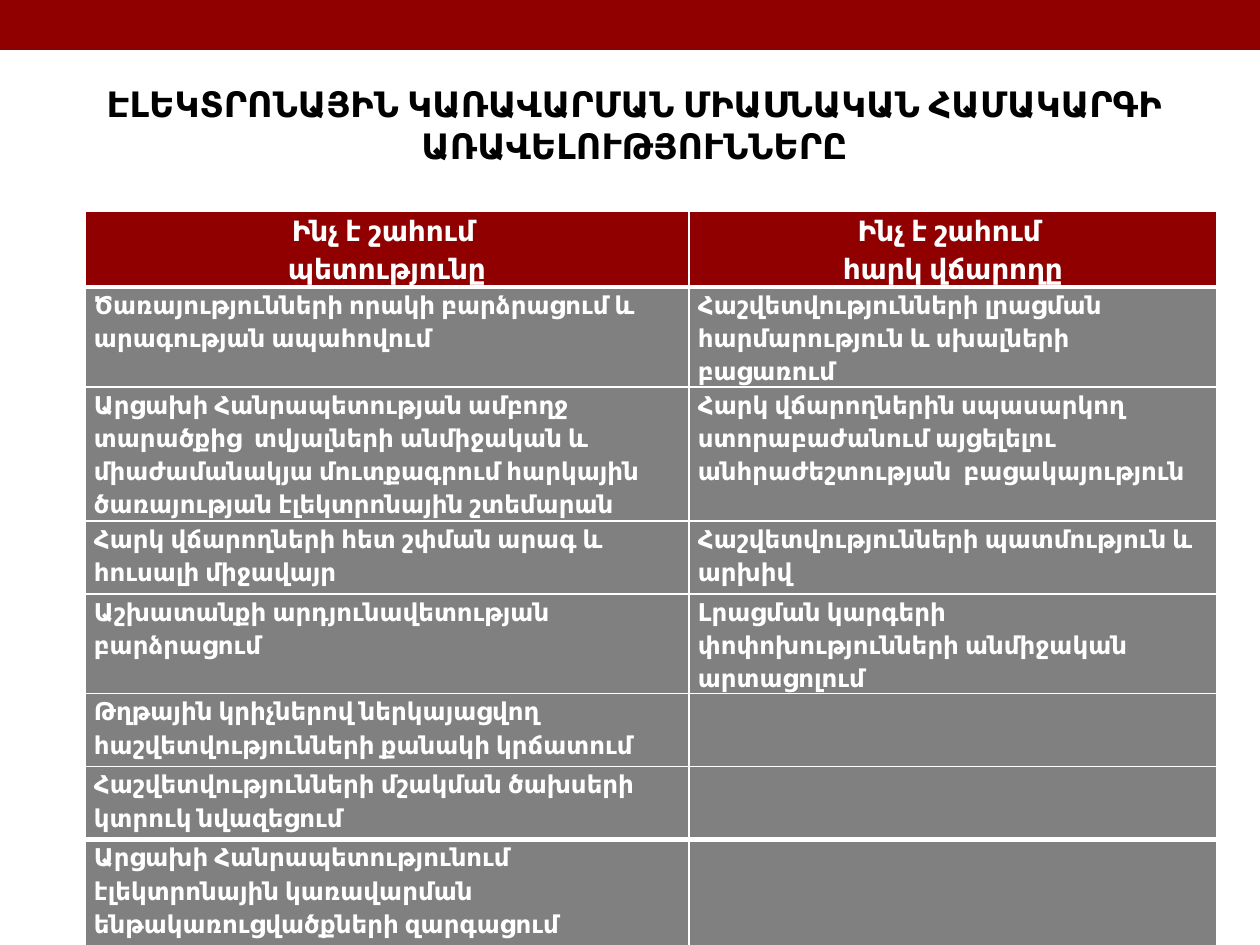
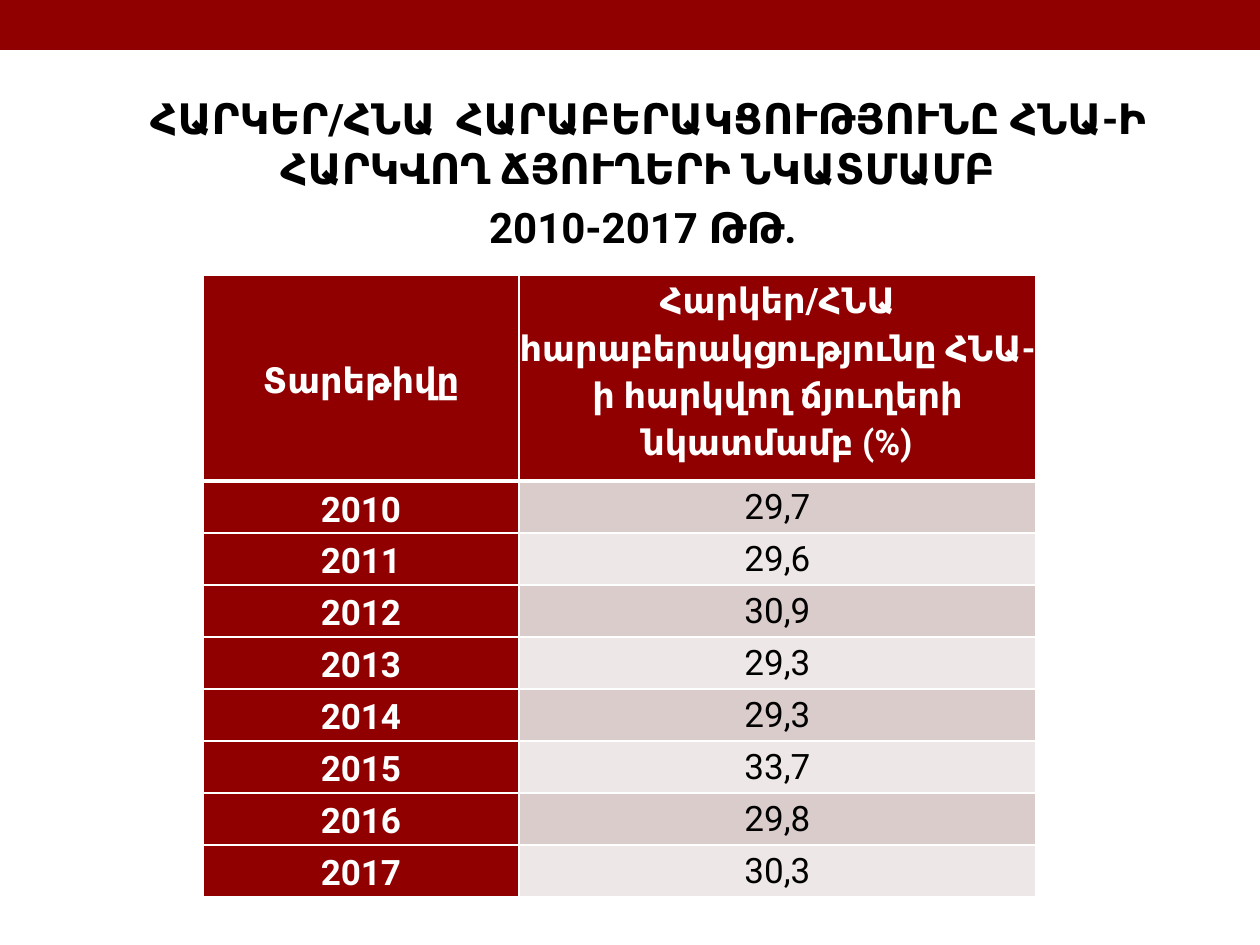
"""Two slides on electronic government and the ratio of taxes to GDP."""
from dataclasses import dataclass

from lxml import etree
from pptx import Presentation
from pptx import util as u
from pptx.dml.color import RGBColor
from pptx.enum import shapes, text
from pptx.oxml.ns import qn

PX = 914400 / 126


def px(length):
    """Turn px into EMU."""
    return u.Emu(round(length * PX))


@dataclass(frozen=True)
class Theme:
    """Colours, font and type sizes."""
    red: str = "900000"
    grey: str = "808080"
    white: str = "FFFFFF"
    black: str = "000000"
    stripes: tuple = ("DBCCCC", "EEE7E7")
    font: str = "Roboto"
    small_title: int = 20
    large_title: int = 24
    benefit_head: int = 16
    benefit: int = 14
    ratio: int = 20


THEME = Theme()
LEFT, CENTER = text.PP_ALIGN.LEFT, text.PP_ALIGN.CENTER
TOP, MIDDLE = text.MSO_ANCHOR.TOP, text.MSO_ANCHOR.MIDDLE


class Deck:
    """Holds the theme, the presentation and the current slide."""

    def __init__(self, theme):
        """Open an empty deck of 10 by 7.5 inches."""
        self.theme = theme
        self.prs = Presentation()
        self.prs.slide_width, self.prs.slide_height = px(1260), px(945)
        self.slide = None

    def new_slide(self):
        """Start a slide with the red top band."""
        self.slide = self.prs.slides.add_slide(self.prs.slide_layouts[5])
        band = self.slide.shapes.add_shape(
            shapes.MSO_SHAPE.RECTANGLE, 0, 0, px(1260), px(50))
        band.shadow.inherit = False
        band.fill.solid()
        band.fill.fore_color.rgb = RGBColor.from_string(self.theme.red)
        band.line.fill.background()

    def format(self, frame, size, color, bold=True, align=CENTER):
        """Give every paragraph and run of a frame one style."""
        for paragraph in frame.paragraphs:
            paragraph.alignment = align
            for run in paragraph.runs:
                run.font.name = self.theme.font
                run.font.size = u.Pt(size)
                run.font.bold = bold
                run.font.color.rgb = RGBColor.from_string(color)

    def title(self, words, box, size, anchor, indent=0, before=0):
        """Place and format the title placeholder."""
        title = self.slide.shapes.title
        title.left, title.top, title.width, title.height = map(px, box)
        frame = title.text_frame
        frame.text = words
        frame.word_wrap = True
        frame.auto_size = text.MSO_AUTO_SIZE.NONE
        frame.vertical_anchor = anchor
        self.format(frame, size, self.theme.black)
        for paragraph in frame.paragraphs:
            paragraph.space_before = u.Pt(before)
            properties = paragraph._p.get_or_add_pPr()
            properties.set("marL", str(px(indent)))
            properties.set("indent", "0")

    def table(self, left, top, columns, rows):
        """Add a plain table with the given column widths and row heights."""
        table = self.slide.shapes.add_table(
            len(rows), len(columns), px(left), px(top),
            px(sum(columns)), px(sum(rows))).table
        table.horz_banding = False
        for column, width in zip(table.columns, columns):
            column.width = px(width)
        for row, height in zip(table.rows, rows):
            row.height = px(height)
        return table

    def cell(self, cell, words, size, fill, color, bold=True, align=CENTER,
             anchor=TOP, inset=9, after=0, top_line=1, bottom_line=1):
        """Fill, border and write one table cell."""
        cell.fill.solid()
        cell.fill.fore_color.rgb = RGBColor.from_string(fill)
        cell.vertical_anchor = anchor
        cell.margin_left = cell.margin_right = px(inset)
        cell.margin_top = cell.margin_bottom = 0
        cell.text_frame.text = words
        self.format(cell.text_frame, size, color, bold, align)
        for paragraph in cell.text_frame.paragraphs:
            paragraph.line_spacing = 1.15
            paragraph.space_after = u.Pt(after)
        edges = {"lnL": 1, "lnR": 1, "lnT": top_line, "lnB": bottom_line}
        properties = cell._tc.get_or_add_tcPr()
        for place, (edge, weight) in enumerate(edges.items()):
            line = etree.Element(qn("a:" + edge), w=str(u.Pt(weight)))
            paint = etree.SubElement(line, qn("a:solidFill"))
            etree.SubElement(paint, qn("a:srgbClr"), val=self.theme.white)
            properties.insert(place, line)


BENEFIT_HEADS = ("Ինչ է շահում \nպետությունը", "Ինչ է շահում \nհարկ վճարողը")
BENEFITS = [
    ("Ծառայությունների որակի բարձրացում և արագության ապահովում",
     "Հաշվետվությունների լրացման հարմարություն և սխալների բացառում"),
    ("Արցախի Հանրապետության ամբողջ տարածքից  տվյալների անմիջական և "
     "միաժամանակյա մուտքագրում հարկային ծառայության էլեկտրոնային շտեմարան",
     "Հարկ վճարողներին սպասարկող ստորաբաժանում այցելելու "
     "անհրաժեշտության  բացակայություն"),
    ("Հարկ վճարողների հետ շփման արագ և հուսալի միջավայր",
     "Հաշվետվությունների պատմություն և արխիվ"),
    ("Աշխատանքի արդյունավետության բարձրացում",
     "Լրացման կարգերի փոփոխությունների անմիջական արտացոլում"),
    ("Թղթային կրիչներով ներկայացվող հաշվետվությունների քանակի կրճատում", ""),
    ("Հաշվետվությունների մշակման ծախսերի կտրուկ նվազեցում", ""),
    ("Արցախի Հանրապետությունում էլեկտրոնային կառավարման "
     "ենթակառուցվածքների զարգացում", ""),
]
RATIO_HEADS = ("Տարեթիվը", "Հարկեր/ՀՆԱ հարաբերակցությունը ՀՆԱ-ի հարկվող "
                           "ճյուղերի նկատմամբ (%)")
RATIOS = ("29,7", "29,6", "30,9", "29,3", "29,3", "33,7", "29,8", "30,3")


def benefits_slide(deck):
    """Build the slide on the benefits for state and taxpayer."""
    theme = deck.theme
    deck.new_slide()
    deck.title("ԷԼԵԿՏՐՈՆԱՅԻՆ ԿԱՌԱՎԱՐՄԱՆ ՄԻԱՍՆԱԿԱՆ ՀԱՄԱԿԱՐԳԻ "
               "ԱՌԱՎԵԼՈՒԹՅՈՒՆՆԵՐԸ",
               (84, 74, 1101, 100), theme.small_title, MIDDLE)
    benefits = deck.table(85, 211, (604, 528),
                          (76, 81, 134, 73, 73, 73, 73, 110))
    thick_edges = {1, len(BENEFITS)}
    for row, pair in enumerate([BENEFIT_HEADS, *BENEFITS]):
        head = row == 0
        for column, words in enumerate(pair):
            deck.cell(benefits.cell(row, column), words,
                      theme.benefit_head if head else theme.benefit,
                      theme.red if head else theme.grey, theme.white,
                      align=CENTER if head else LEFT,
                      top_line=3 if row in thick_edges else 1,
                      bottom_line=3 if row + 1 in thick_edges else 1)


def ratio_slide(deck):
    """Build the slide on the yearly ratio of taxes to GDP."""
    theme = deck.theme
    deck.new_slide()
    deck.title(" ՀԱՐԿԵՐ/ՀՆԱ  ՀԱՐԱԲԵՐԱԿՑՈՒԹՅՈՒՆԸ ՀՆԱ-Ի ՀԱՐԿՎՈՂ ՃՅՈՒՂԵՐԻ "
               "ՆԿԱՏՄԱՄԲ \n2010-2017 ԹԹ.",
               (74, 86, 1123, 180), theme.large_title, TOP, 15, 4.8)
    ratios = deck.table(203, 275, (316, 517), [206] + [52] * len(RATIOS))
    years = [(str(year), ratio) for year, ratio in enumerate(RATIOS, 2010)]
    for row, (year, ratio) in enumerate([RATIO_HEADS, *years]):
        head = row == 0
        lines = {"top_line": 3 if row == 1 else 1,
                 "bottom_line": 3 if head else 1}
        deck.cell(ratios.cell(row, 0), year, theme.ratio, theme.red,
                  theme.white, anchor=MIDDLE, after=10, **lines)
        deck.cell(ratios.cell(row, 1), ratio, theme.ratio,
                  theme.red if head else theme.stripes[(row - 1) % 2],
                  theme.white if head else theme.black,
                  bold=head, inset=0, after=10, **lines)


def main():
    """Build and save the deck."""
    deck = Deck(THEME)
    benefits_slide(deck)
    ratio_slide(deck)
    deck.prs.save("out.pptx")


if __name__ == "__main__":
    main()
